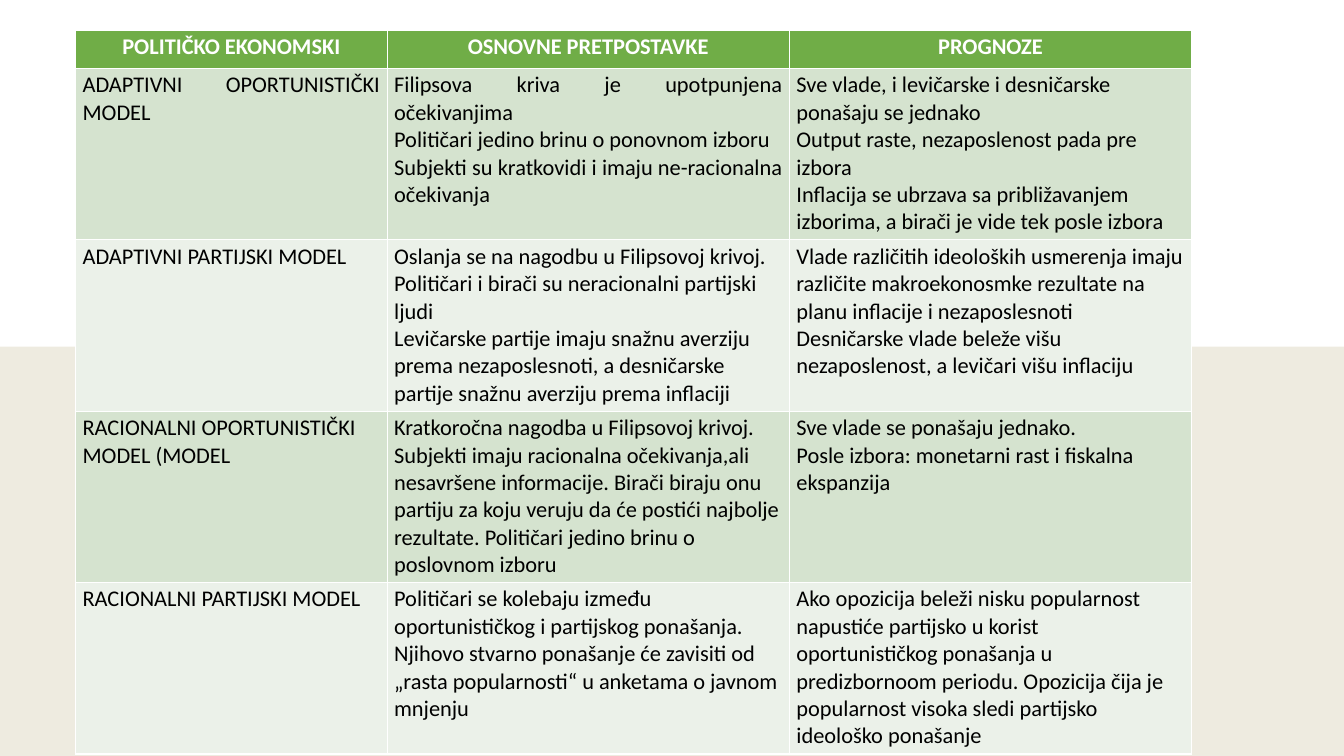
from lxml import etree
from pptx import Presentation
from pptx.dml.color import RGBColor
from pptx.enum.shapes import MSO_SHAPE
from pptx.enum.text import PP_ALIGN
from pptx.oxml.ns import qn
from pptx.util import Inches, Pt

RECT = MSO_SHAPE.RECTANGLE
LEFT, CENTER, JUSTIFY = PP_ALIGN.LEFT, PP_ALIGN.CENTER, PP_ALIGN.JUSTIFY


def paint(fill, color):
    fill.solid()
    fill.fore_color.rgb = RGBColor.from_string(color)


deck = Presentation()
deck.slide_width, deck.slide_height = Inches(13.33), Inches(7.5)
slide = deck.slides.add_slide(deck.slide_layouts[6])

for high, color, alpha in [(7.5, "F2F2F2", 100), (7.5, "BF9000", 7), (3.44, "FFFFFF", 100)]:
    band = slide.shapes.add_shape(RECT, 0, 0, Inches(13.33), Inches(high))
    band.shadow.inherit = False
    band.line.fill.background()
    paint(band.fill, color)
    if alpha < 100:
        tint = band.fill._xPr.find(".//" + qn("a:srgbClr"))
        etree.SubElement(tint, qn("a:alpha"), val=str(alpha * 1000))

rows = [
    ["POLITIČKO EKONOMSKI", "OSNOVNE PRETPOSTAVKE", "PROGNOZE"],
    [
        "ADAPTIVNI OPORTUNISTIČKI MODEL",
        "Filipsova kriva je upotpunjena očekivanjima\n"
        "Političari jedino brinu o ponovnom izboru\n"
        "Subjekti su kratkovidi i imaju ne-racionalna očekivanja",
        "Sve vlade, i levičarske i desničarske ponašaju se jednako\n"
        "Output raste, nezaposlenost pada pre izbora\n"
        "Inflacija se ubrzava sa približavanjem izborima, a birači je vide tek posle izbora",
    ],
    [
        "ADAPTIVNI PARTIJSKI MODEL",
        "Oslanja se na nagodbu u Filipsovoj krivoj.\n"
        "Političari i birači su neracionalni partijski ljudi\n"
        "Levičarske partije imaju snažnu averziju prema nezaposlesnoti, "
        "a desničarske partije snažnu averziju prema inflaciji",
        "Vlade različitih ideoloških usmerenja imaju različite makroekonosmke "
        "rezultate na planu inflacije i nezaposlesnoti\n"
        "Desničarske vlade beleže višu nezaposlenost, a levičari višu inflaciju",
    ],
    [
        "RACIONALNI OPORTUNISTIČKI MODEL (MODEL",
        "Kratkoročna nagodba u Filipsovoj krivoj.\n"
        "Subjekti imaju racionalna očekivanja,ali nesavršene informacije. "
        "Birači biraju onu partiju za koju veruju da će postići najbolje rezultate. "
        "Političari jedino brinu o poslovnom izboru",
        "Sve vlade se ponašaju jednako.\n"
        "Posle izbora: monetarni rast i fiskalna ekspanzija",
    ],
    [
        "RACIONALNI PARTIJSKI MODEL",
        "Političari se kolebaju između oportunističkog i partijskog ponašanja. "
        "Njihovo stvarno ponašanje će zavisiti od „rasta popularnosti“ "
        "u anketama o javnom mnjenju",
        "Ako opozicija beleži nisku popularnost napustiće partijsko u korist "
        "oportunističkog ponašanja u predizbornoom periodu. Opozicija čija je "
        "popularnost visoka sledi partijsko ideološko ponašanje",
    ],
]

frame = slide.shapes.add_table(5, 3, Inches(0.75), Inches(0.3), Inches(11.07), Inches(7.18))
table = frame.table
for col, wide in zip(table.columns, [3.09, 3.99, 3.99]):
    col.width = Inches(wide)

for r, texts in enumerate(rows):
    head = r == 0
    table.rows[r].height = Inches(0.38 if head else 1.7)
    for c, text in enumerate(texts):
        cell = table.cell(r, c)
        paint(cell.fill, "70AD47" if head else "D5E3CF" if r % 2 else "EBF1E9")
        cell.margin_left = cell.margin_right = Inches(0.07)
        cell.margin_top = cell.margin_bottom = Inches(0.03)
        cell.text = text
        for para in cell.text_frame.paragraphs:
            para.alignment = CENTER if head else JUSTIFY if r == 1 and c < 2 else LEFT
            para.font.name = "Calibri"
            para.font.size = Pt(16)
            para.font.bold = head
            paint(para.font.fill, "FFFFFF" if head else "000000")

deck.save("out.pptx")
